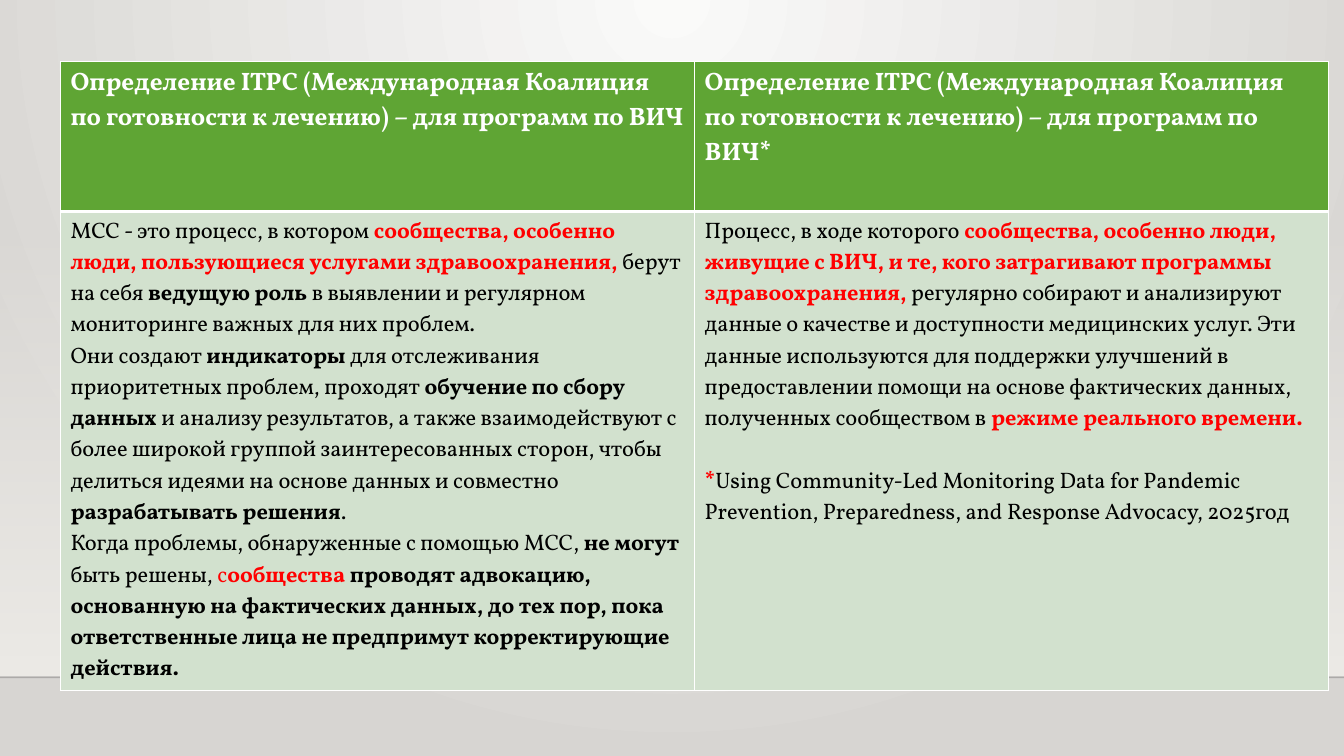
from lxml.etree import SubElement
from pptx import Presentation
from pptx.dml.color import RGBColor
from pptx.enum.shapes import MSO_CONNECTOR, MSO_SHAPE
from pptx.oxml.ns import qn
from pptx.util import Inches, Pt

FONT = "Vollkorn"
COLORS = {
    "white": "FFFFFF", "black": "000000", "red": "FF0000",
    "green": "5FA534", "pale": "D2E1CE", "glow": "FAFAF9",
    "edge": "D7D5D2", "wall": "EDEBE7", "line": "000001",
}
STYLES = {
    "n": ("black", False), "b": ("black", True),
    "r": ("red", False), "rb": ("red", True), "head": ("white", True),
}
HEAD = "Определение ITPC (Международная Коалиция по готовности к лечению) – для программ по ВИЧ"
LEFT = [
    [("МСС - это процесс, в котором ", "n"),
     ("сообщества, особенно люди, пользующиеся услугами здравоохранения, ", "rb"),
     ("берут на себя ", "n"), ("ведущую роль ", "b"),
     ("в выявлении и регулярном мониторинге важных для них проблем.", "n")],
    [("Они создают ", "n"), ("индикаторы ", "b"),
     ("для отслеживания приоритетных проблем, проходят ", "n"),
     ("обучение по сбору данных ", "b"),
     ("и анализу результатов, а также взаимодействуют с более широкой группой "
      "заинтересованных сторон, чтобы делиться идеями на основе данных и совместно ", "n"),
     ("разрабатывать решения", "b"), (".", "n")],
    [("Когда проблемы, обнаруженные с помощью МСС, ", "n"), ("не могут ", "b"),
     ("быть решены, ", "n"), ("с", "r"), ("ообщества ", "rb"),
     ("проводят адвокацию, основанную на фактических данных, до тех пор, пока "
      "ответственные лица не предпримут корректирующие действия.", "b")],
]
RIGHT = [
    [("Процесс, в ходе которого ", "n"),
     ("сообщества, особенно люди, живущие с ВИЧ, и те, кого затрагивают программы "
      "здравоохранения, ", "rb"),
     ("регулярно собирают и анализируют данные о качестве и доступности медицинских услуг. "
      "Эти данные используются для поддержки улучшений в предоставлении помощи на основе "
      "фактических данных, полученных сообществом в ", "n"),
     ("режиме реального времени.", "rb")],
    [("*", "rb"),
     ("Using Community-Led Monitoring Data for Pandemic Prevention, Preparedness, "
      "and Response Advocacу, 2025год", "n")],
]


def color(name):
    return RGBColor.from_string(COLORS[name])


def blend(fill, first, last):
    fill.gradient()
    for stop, name, place in zip(fill.gradient_stops, (first, last), (0, 1)):
        stop.color.rgb = color(name)
        stop.position = place


def fade(root, share):
    tint = next(root.iter(qn("a:srgbClr")))
    SubElement(tint, qn("a:alpha"), val=str(share * 1000))


def backdrop(slide):
    blend(slide.background.fill, "glow", "edge")
    grad = next(slide.element.iter(qn("a:gradFill")))
    grad.remove(grad.find(qn("a:lin")))
    path = SubElement(grad, qn("a:path"), path="circle")
    SubElement(path, qn("a:fillToRect"), l="43000", t="0", r="43000", b="100000")


def wall(slide, top, width, height):
    shape = slide.shapes.add_shape(MSO_SHAPE.RECTANGLE, 0, Inches(top), width, Inches(height))
    shape.shadow.inherit = False
    shape.line.fill.background()
    blend(shape.fill, "wall", "wall")
    shape.fill.gradient_angle = 270
    fade(shape.element.spPr, 0)


def floor(slide, top, width):
    line = slide.shapes.add_connector(
        MSO_CONNECTOR.STRAIGHT, 0, Inches(top), width, Inches(top))
    line.line.color.rgb = color("line")
    line.line.width = Pt(1)
    props = line.element.spPr
    fade(props, 20)
    SubElement(props, qn("a:effectLst"))


def border(cell, under):
    props = cell._tc.get_or_add_tcPr()
    for side, width in (("L", 1), ("R", 1), ("T", 1), ("B", under)):
        line = SubElement(props, qn(f"a:ln{side}"), w=str(Pt(width)))
        fill = SubElement(line, qn("a:solidFill"))
        SubElement(fill, qn("a:srgbClr"), val=COLORS["white"])


def write(cell, paras, size, fill, under=1, gap=0):
    border(cell, under)
    cell.fill.solid()
    cell.fill.fore_color.rgb = color(fill)
    frame = cell.text_frame
    for i, parts in enumerate(paras):
        para = frame.add_paragraph() if i else frame.paragraphs[0]
        para.space_before = Pt(gap if i else 0)
        para.font.name = FONT
        para.font.size = Pt(size)
        for text, style in parts:
            run = para.add_run()
            run.text = text
            tint, run.font.bold = STYLES[style]
            run.font.color.rgb = color(tint)


def compare(slide):
    rows, width = (1.49, 4.75), 12.58
    frame = slide.shapes.add_table(
        2, 2, Inches(0.6), Inches(0.61), Inches(width), Inches(sum(rows)))
    table = frame.table
    table.horz_banding = False
    for row, height in zip(table.rows, rows):
        row.height = Inches(height)
    for col in table.columns:
        col.width = Inches(width / 2)
    for i, (mark, body, gap) in enumerate((("", LEFT, 0), ("*", RIGHT, 22.4))):
        write(table.cell(0, i), [[(HEAD + mark, "head")]], 18, "green", under=3)
        write(table.cell(1, i), body, 16, "pale", gap=gap)


def main():
    deck = Presentation()
    deck.slide_width = Inches(13.33)
    deck.slide_height = Inches(7.5)
    slide = deck.slides.add_slide(deck.slide_layouts[6])
    backdrop(slide)
    wall(slide, 2.2, deck.slide_width, 4.5)
    floor(slide, 6.72, deck.slide_width)
    compare(slide)
    deck.save("out.pptx")


if __name__ == "__main__":
    main()
